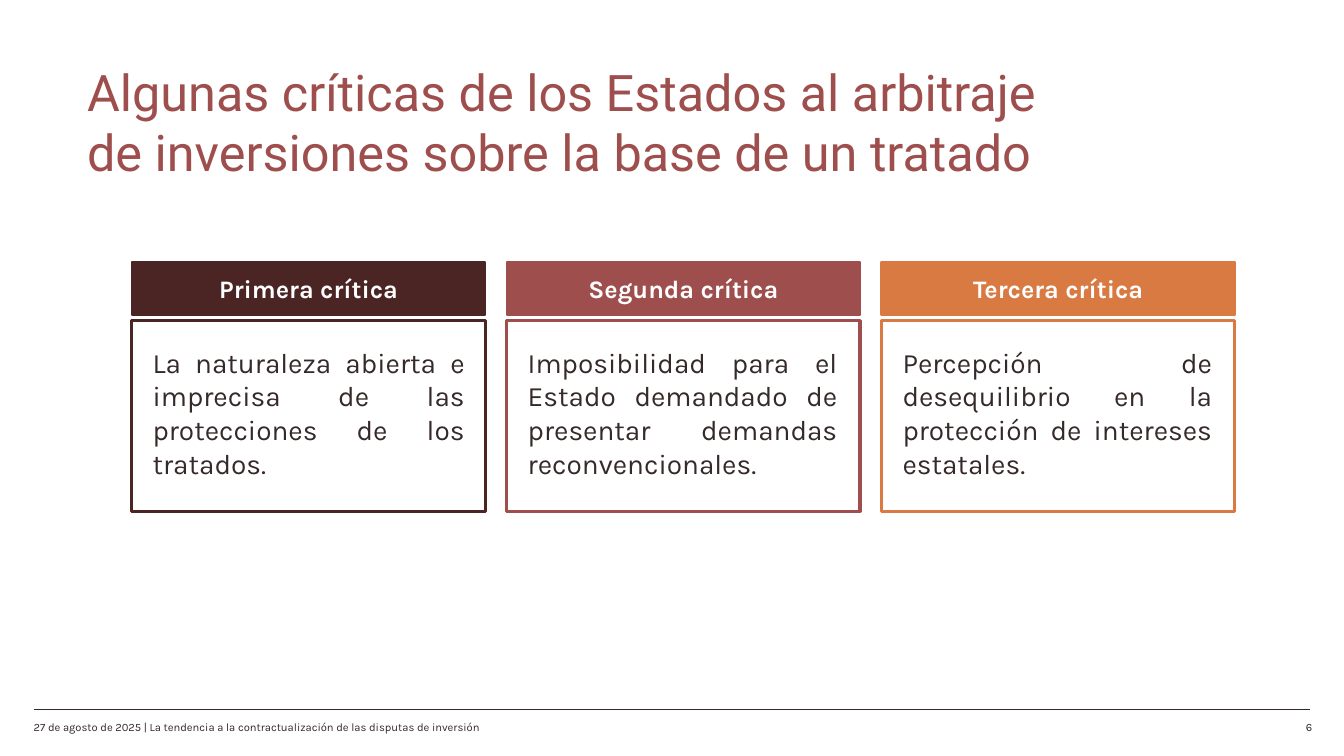
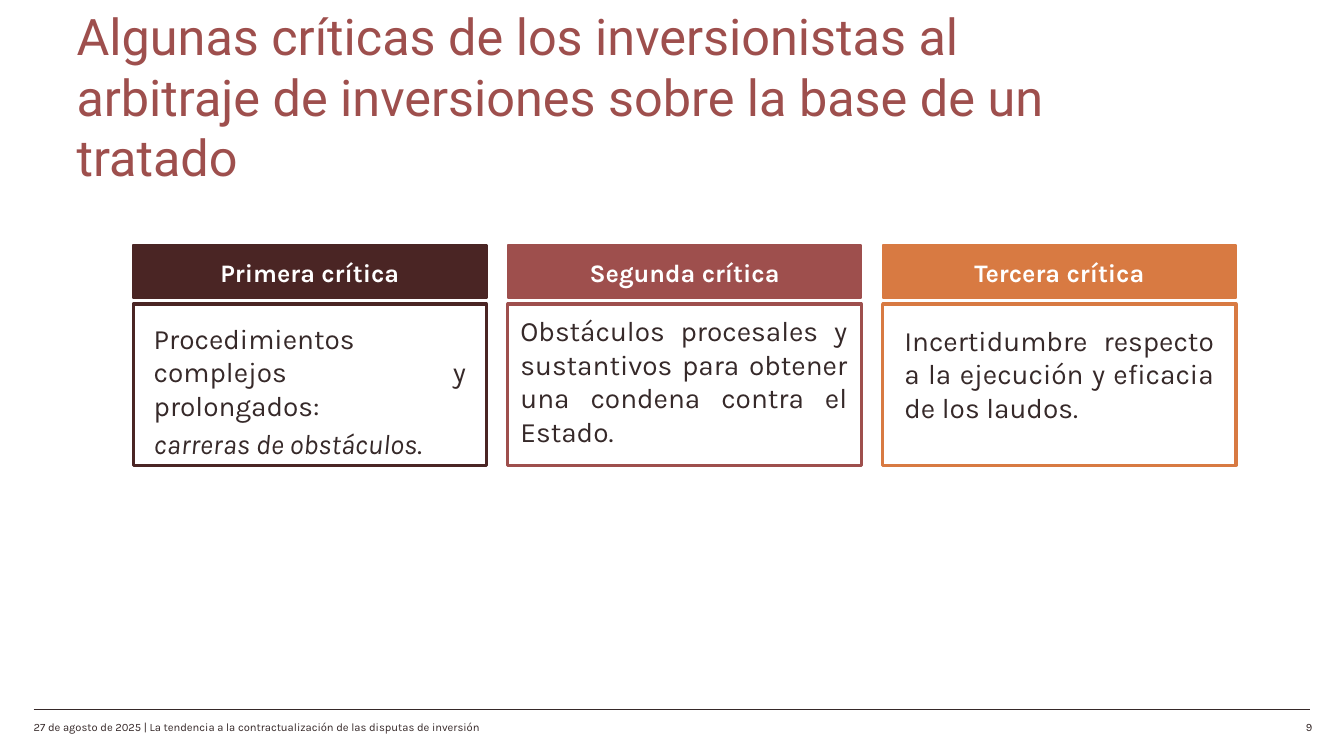
import pptx
import pptx.dml.color
import pptx.enum.shapes
import pptx.enum.text
import pptx.oxml
import pptx.util

Cm = pptx.util.Cm
Pt = pptx.util.Pt
ALIGN = pptx.enum.text.PP_ALIGN
ANCHOR = pptx.enum.text.MSO_ANCHOR

INK = "362929"
RED = "9E4F4D"
CARD_COLORS = ["4A2524", RED, "D87A42"]
CARD_HEADINGS = ["Primera crítica", "Segunda crítica", "Tercera crítica"]
CARD_WIDTH = 17.81
CARD_STEP = 18.89
HEADING_HEIGHT = 2.67
BOX_OFFSET = 2.95
FOOTER = "27 de agosto de 2025 | La tendencia a la contractualización de las disputas de inversión"

TITLE_STYLE = {"name": "Roboto", "size": Pt(72), "color": RED}
HEADING_STYLE = {"name": "Karla", "size": Pt(36), "bold": True, "color": "FFFFFF"}
BODY_STYLE = {"name": "Karla", "size": Pt(40), "color": INK}
FOOTER_STYLE = {"name": "Karla", "size": Pt(16), "color": INK}

SLIDES = [
    {
        "number": "6",
        "title": "Algunas críticas de los Estados al arbitraje de inversiones sobre la base de un tratado",
        "title_place": (4.39, 5.66, 50.6, 3.51),
        "left": 6.65,
        "top": 13.21,
        "box_height": 9.6,
        "bodies": [
            ((0.79, 1.12, 16.23, 8.56),
             [[("La naturaleza abierta e imprecisa de las protecciones de los tratados.", {})]]),
            ((0.81, 1.12, 16.1, 7.09),
             [[("Imposibilidad para el Estado demandado de presentar demandas reconvencionales.", {})]]),
            ((0.81, 1.12, 16.1, 7.09),
             [[("Percepción de desequilibrio en la protección de intereses estatales.", {})]]),
        ],
    },
    {
        "number": "9",
        "title": "Algunas críticas de los inversionistas al arbitraje de inversiones sobre la base de un tratado",
        "title_place": (3.86, 2.84, 53.72, 6.58),
        "left": 6.71,
        "top": 12.37,
        "box_height": 8.13,
        "bodies": [
            ((0.79, 0.74, 16.23, 2.36),
             [[("Procedimientos complejos y prolongados:", {})],
              [("carreras de obstáculos", {"italic": True}), (".", {})]]),
            ((0.38, 0.36, 16.97, 7.09),
             [[("Obstáculos procesales y sustantivos para obtener una condena contra el Estado.", {})]]),
            ((0.84, 0.84, 16.1, 5.38),
             [[("Incertidumbre respecto a la ejecución y eficacia de los laudos.", {})]]),
        ],
    },
]


def rgb(color):
    return pptx.dml.color.RGBColor.from_string(color)


def style_font(font, style):
    for name, value in style.items():
        if name == "color":
            font.color.rgb = rgb(value)
        else:
            setattr(font, name, value)


def write_text(frame, paragraphs, style, align, anchor):
    frame.word_wrap = True
    frame.vertical_anchor = anchor
    for index, runs in enumerate(paragraphs):
        paragraph = frame.add_paragraph() if index else frame.paragraphs[0]
        paragraph.alignment = align
        if index:
            paragraph.space_before = Pt(6)
        for text, changes in runs:
            run = paragraph.add_run()
            run.text = text
            style_font(run.font, {**style, **changes})


def add_text(slide, place, paragraphs, style, align=ALIGN.LEFT, anchor=ANCHOR.TOP, inset=True):
    frame = slide.shapes.add_textbox(*map(Cm, place)).text_frame
    if not inset:
        for side in ("left", "top", "right", "bottom"):
            setattr(frame, f"margin_{side}", 0)
    write_text(frame, paragraphs, style, align, anchor)


def add_rectangle(slide, place, line_color, line_width, fill_color=None):
    shape = slide.shapes.add_shape(pptx.enum.shapes.MSO_SHAPE.RECTANGLE, *map(Cm, place))
    shape.shadow.inherit = False
    shape.line.color.rgb = rgb(line_color)
    shape.line.width = Pt(line_width)
    if fill_color:
        shape.fill.solid()
        shape.fill.fore_color.rgb = rgb(fill_color)
    else:
        shape.fill.background()
    return shape


def add_footer(slide, number):
    rule = slide.shapes.add_connector(
        pptx.enum.shapes.MSO_CONNECTOR.STRAIGHT, *map(Cm, (1.7, 35.74, 66.04, 35.74)))
    rule.line.color.rgb = rgb(INK)
    rule.line.width = Pt(0.5)
    properties = rule._element.spPr
    properties.append(properties.makeelement(pptx.oxml.ns.qn("a:effectLst"), {}))
    add_text(slide, (1.7, 36.3, 22.86, 0.69), [[(FOOTER, {})]], FOOTER_STYLE,
             anchor=ANCHOR.MIDDLE, inset=False)
    add_text(slide, (64.49, 36.3, 1.65, 0.69), [[(number, {})]], FOOTER_STYLE,
             align=ALIGN.RIGHT, anchor=ANCHOR.MIDDLE, inset=False)


def add_card(slide, left, top, box_height, color, heading, body):
    header = add_rectangle(slide, (left, top, CARD_WIDTH, HEADING_HEIGHT), color, 3, color)
    write_text(header.text_frame, [[(heading, {})]], HEADING_STYLE, ALIGN.CENTER, ANCHOR.MIDDLE)
    box_top = top + BOX_OFFSET
    add_rectangle(slide, (left, box_top, CARD_WIDTH, box_height), color, 4.5)
    (indent, drop, width, height), paragraphs = body
    add_text(slide, (left + indent, box_top + drop, width, height), paragraphs,
             BODY_STYLE, align=ALIGN.JUSTIFY)


def add_critique_slide(presentation, content):
    slide = presentation.slides.add_slide(presentation.slide_layouts[6])
    add_footer(slide, content["number"])
    add_text(slide, content["title_place"], [[(content["title"], {})]], TITLE_STYLE,
             anchor=ANCHOR.BOTTOM, inset=False)
    cards = zip(CARD_COLORS, CARD_HEADINGS, content["bodies"])
    for column, (color, heading, body) in enumerate(cards):
        add_card(slide, content["left"] + column * CARD_STEP, content["top"],
                 content["box_height"], color, heading, body)


def main():
    presentation = pptx.Presentation()
    presentation.slide_width = Cm(67.74)
    presentation.slide_height = Cm(38.1)
    for content in SLIDES:
        add_critique_slide(presentation, content)
    presentation.save("out.pptx")


if __name__ == "__main__":
    main()
